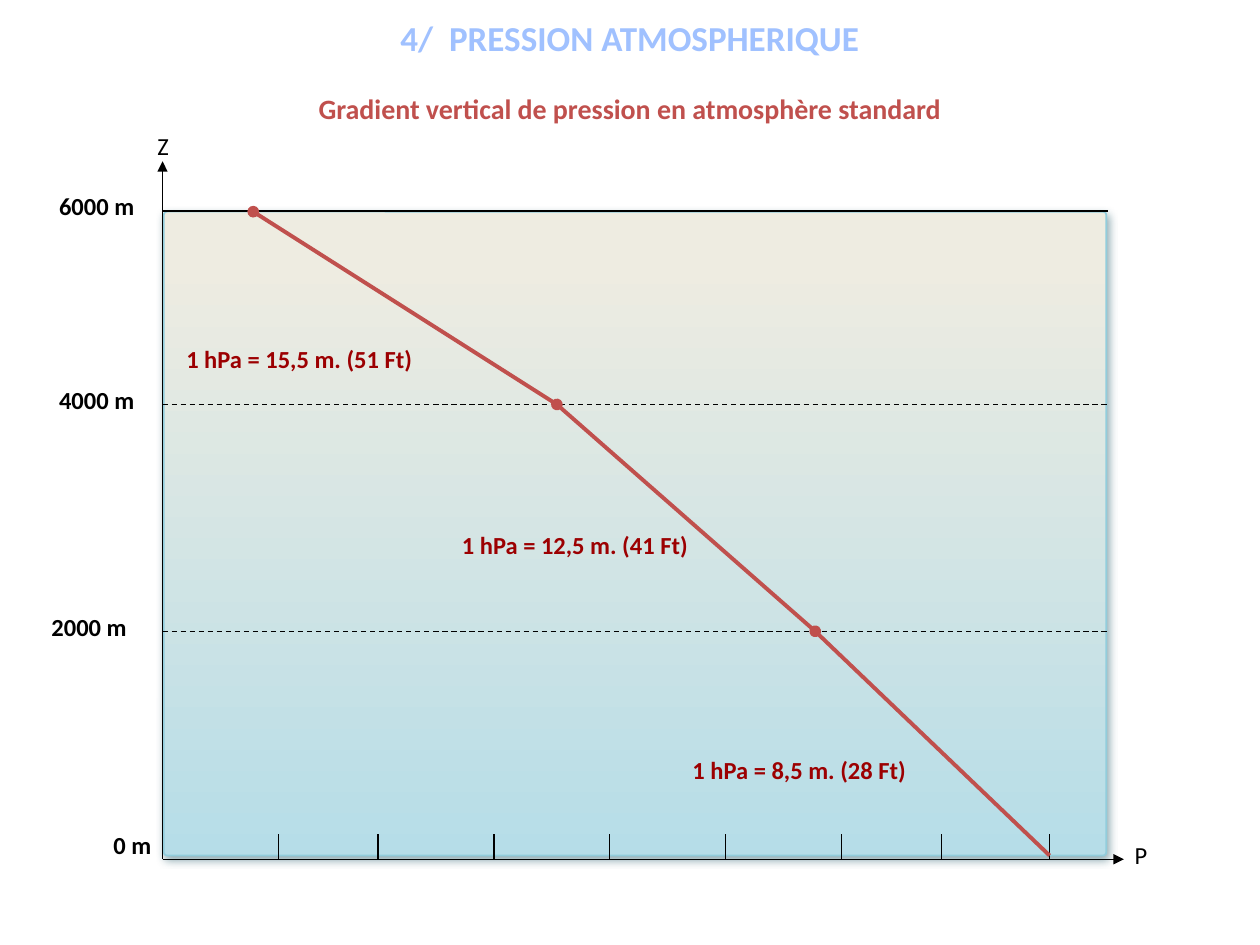
import pptx
import pptx.util
import pptx.dml.color
import pptx.enum.dml
import pptx.enum.shapes
import pptx.enum.text
import pptx.oxml
import pptx.oxml.ns

COLS, ROWS = 100, 75
BLACK, RED, DARK = "000000", "C0504D", "9C0001"
ALIGN = pptx.enum.text.PP_ALIGN
LEFT, RIGHT, TOP, BASE = 12.9, 87.9, 16.75, 68.2
TICKS = [22.1, 30, 39.2, 48.4, 57.6, 66.8, 74.7, 83.3]
CURVE = [(83.3, 67.9), (64.7, 50.1), (44.2, 32.1), (20.1, 16.8)]
MARKS = [
    ("6000 m", 3.7, 14.7, 10.5, ALIGN.LEFT),
    ("4000 m", 3.7, 30.1, 10.5, ALIGN.LEFT),
    ("2000 m", 3.1, 48.1, 9.9, ALIGN.LEFT),
    ("0 m", 4.4, 65.4, 8.6, ALIGN.RIGHT),
]
RATES = [
    ("1 hPa = 15,5 m. (51 Ft)", 13.8, 26.8, 37.5, ALIGN.LEFT),
    ("1 hPa = 12,5 m. (41 Ft)", 18.1, 41.6, 37.5, ALIGN.RIGHT),
    ("1 hPa = 8,5 m. (28 Ft)", 48.4, 59.4, 24.5, ALIGN.RIGHT),
]
SHADE = """<a:effectLst %s><a:outerShdw blurRad="63500" dist="29210" dir="3900000"
 algn="tl" rotWithShape="0"><a:srgbClr val="205867"><a:alpha val="50000"/></a:srgbClr>
 </a:outerShdw></a:effectLst>"""


def unit(*sizes):
    return [pptx.util.Inches(size / 10) for size in sizes]


def color(code):
    return pptx.dml.color.RGBColor.from_string(code)


def apply(item, form):
    for name, value in form.items():
        setattr(item, name, value)


def xml(text):
    return pptx.oxml.parse_xml(text % pptx.oxml.ns.nsdecls("a"))


def write(box, text, size, tint, align=ALIGN.CENTER, bold=True, after=0):
    frame = box.text_frame
    frame.text = text
    apply(frame, {"word_wrap": True, "auto_size": pptx.enum.text.MSO_AUTO_SIZE.NONE})
    para = frame.paragraphs[0]
    apply(para, {"alignment": align, "space_before": pptx.util.Pt(0),
                 "space_after": pptx.util.Pt(after)})
    font = para.runs[0].font
    apply(font, {"name": "Calibri", "size": pptx.util.Pt(size), "bold": bold})
    font.color.rgb = color(tint)


def label(slide, text, x, y, wide, align=ALIGN.CENTER, size=14, tint=BLACK, **form):
    box = slide.shapes.add_textbox(*unit(x, y, wide, 3.4))
    write(box, text, size, tint, align, **form)


def line(slide, start, end, tint=BLACK, width=0.75, dash=None, tail=None):
    link = slide.shapes.add_connector(
        pptx.enum.shapes.MSO_CONNECTOR.STRAIGHT, *unit(*start, *end))
    link.line.color.rgb = color(tint)
    apply(link.line, {"width": pptx.util.Pt(width), "dash_style": dash})
    if tail:
        link.line._get_or_add_ln().append(xml(f'<a:tailEnd %s type="{tail}"/>'))
    link._element.spPr.append(xml("<a:effectLst %s/>"))


def panel(slide):
    box = slide.shapes.add_shape(
        pptx.enum.shapes.MSO_SHAPE.ROUNDED_RECTANGLE, *unit(13, 16.8, 74.8, 51.1))
    box.adjustments[0] = 0.005
    box.fill.gradient()
    box.fill.gradient_angle = 270
    for stop, tint, place in zip(box.fill.gradient_stops, ["EEECE1", "B6DDE8"], [0.08, 1]):
        stop.color.rgb = color(tint)
        stop.position = place
    box.line.color.rgb = color("92CDDC")
    box.line.width = pptx.util.Pt(1)
    box._element.spPr.append(xml(SHADE))


def title(slide):
    box = slide.shapes.title
    apply(box, dict(zip(["left", "top", "width", "height"], unit(0, 0.3, COLS, 5.4))))
    write(box, "4/  PRESSION ATMOSPHERIQUE", 20, "A0C1FF", after=12)
    box.text_frame.vertical_anchor = pptx.enum.text.MSO_ANCHOR.MIDDLE


def axes(slide):
    line(slide, (LEFT, BASE), (LEFT, 12.8), tail="triangle")
    line(slide, (LEFT, BASE), (89.2, BASE), tail="triangle")
    line(slide, (LEFT, TOP), (RIGHT, TOP))
    for y in (32.1, 50.1):
        line(slide, (LEFT, y), (RIGHT, y), dash=pptx.enum.dml.MSO_LINE.DASH)
    for x in TICKS:
        line(slide, (x, BASE - 2), (x, BASE))
    label(slide, "Z", 9, 9.9, 7.9, bold=False)
    label(slide, "P", 86.6, 66.2, 7.9, bold=False)


def main():
    deck = pptx.Presentation()
    deck.slide_width, deck.slide_height = unit(COLS, ROWS)
    slide = deck.slides.add_slide(deck.slide_layouts[5])
    title(slide)
    panel(slide)
    axes(slide)
    for mark in MARKS:
        label(slide, *mark)
    for rate in RATES:
        label(slide, *rate, tint=DARK)
    for start, end in zip(CURVE, CURVE[1:]):
        line(slide, start, end, RED, 2.25, tail="oval")
    label(slide, "Gradient vertical de pression en atmosphère standard",
          0, 6.8, COLS, size=16, tint=RED, after=6)
    deck.save("out.pptx")


if __name__ == "__main__":
    main()
